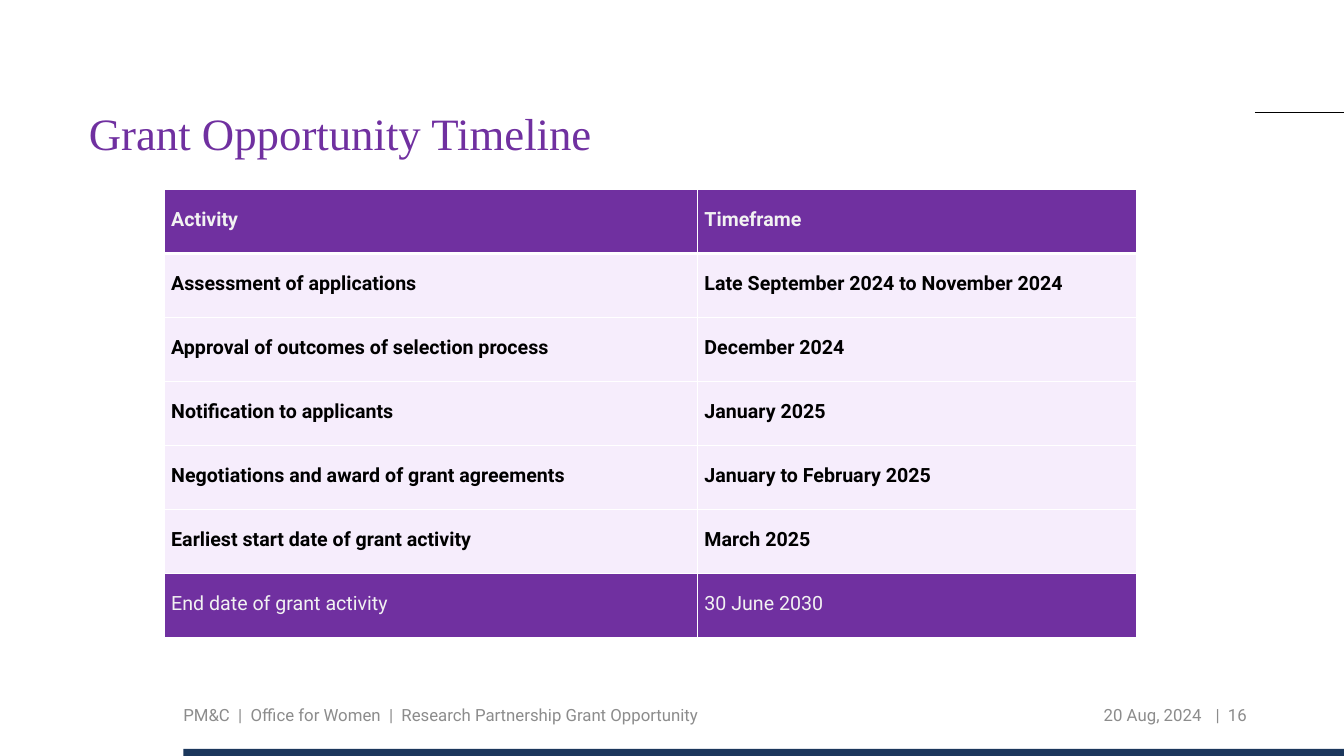
from lxml.etree import SubElement
from pptx import Presentation
from pptx.dml.color import RGBColor
from pptx.enum.shapes import MSO_CONNECTOR, MSO_SHAPE
from pptx.enum.text import MSO_ANCHOR, PP_ALIGN
from pptx.oxml.ns import qn
from pptx.util import Pt

PURPLE, LILAC, NAVY = "7030A0", "ECD9F9", "1B375C"
WHITE, PALE, GREY, BLACK = "FFFFFF", "F2F2F2", "8C8C8C", "000000"
SLIDE_WIDTH, SLIDE_HEIGHT = 960, 540
COLUMN_WIDTHS = (380.9, 313.9)
ROW_HEIGHT = 45.77
TIMELINE = [
    ("Activity", "Timeframe"),
    ("Assessment of applications", "Late September 2024 to November 2024"),
    ("Approval of outcomes of selection process", "December 2024"),
    ("Notification to applicants", "January 2025"),
    ("Negotiations and award of grant agreements", "January to February 2025"),
    ("Earliest start date of grant activity", "March 2025"),
    ("End date of grant activity", "30 June 2030"),
]
FOOTER = [
    ("PM&C  |  Office for Women  |  Research Partnership Grant Opportunity",
     131, 422.6, PP_ALIGN.LEFT),
    ("20 Aug, 2024", 726.5, 131.8, PP_ALIGN.RIGHT),
    ("|  16", 868.3, 28.8, PP_ALIGN.LEFT),
]


def rgb(value):
    return RGBColor.from_string(value)


def apply(target, values):
    for name, value in values.items():
        setattr(target, name, value)


def write(frame, text, size, font, color, bold=False, **paragraph_format):
    paragraph = frame.paragraphs[0]
    apply(paragraph, paragraph_format)
    run = paragraph.add_run()
    run.text = text
    apply(run.font, {"size": Pt(size), "name": font, "bold": bold})
    run.font.color.rgb = rgb(color)


def clear_margins(frame, anchor):
    apply(frame, {"margin_left": 0, "margin_right": 0, "margin_top": 0,
                  "margin_bottom": 0, "vertical_anchor": anchor, "word_wrap": True})


def add_heading(slide, text):
    title = slide.shapes.title
    apply(title, {"left": Pt(63.4), "top": Pt(80), "width": Pt(833.8), "height": Pt(65.5)})
    clear_margins(title.text_frame, MSO_ANCHOR.TOP)
    write(title.text_frame, text, 32, "Times New Roman", PURPLE,
          alignment=PP_ALIGN.LEFT, line_spacing=0.9)


def add_rule(slide, left, top):
    rule = slide.shapes.add_connector(
        MSO_CONNECTOR.STRAIGHT, Pt(left), Pt(top), Pt(SLIDE_WIDTH), Pt(top))
    rule.line.width = Pt(0.5)
    rule.line.color.rgb = rgb(BLACK)
    SubElement(rule._element.spPr, qn("a:effectLst"))


def add_bar(slide, left, height):
    bar = slide.shapes.add_shape(
        MSO_SHAPE.RECTANGLE, Pt(left), Pt(SLIDE_HEIGHT - height),
        Pt(SLIDE_WIDTH - left), Pt(height))
    bar.shadow.inherit = False
    bar.fill.solid()
    bar.fill.fore_color.rgb = rgb(NAVY)
    bar.line.fill.background()


def set_borders(cell, widths):
    properties = cell._tc.get_or_add_tcPr()
    for side, width in widths.items():
        border = SubElement(properties, qn(f"a:{side}"), w=str(Pt(width)))
        fill = SubElement(border, qn("a:solidFill"))
        SubElement(fill, qn("a:srgbClr"), val=WHITE)


def fill_cell(cell, color, opacity):
    cell.fill.solid()
    cell.fill.fore_color.rgb = rgb(color)
    if opacity < 100:
        tint = cell._tc.tcPr.find(f".//{qn('a:solidFill')}[last()]")
        tint = cell._tc.tcPr.find(qn("a:solidFill")).find(qn("a:srgbClr"))
        SubElement(tint, qn("a:alpha"), val=str(opacity * 1000))


def add_timeline(slide, left, top):
    last = len(TIMELINE) - 1
    timeline = slide.shapes.add_table(
        len(TIMELINE), len(COLUMN_WIDTHS), Pt(left), Pt(top),
        Pt(sum(COLUMN_WIDTHS)), Pt(ROW_HEIGHT * len(TIMELINE))).table
    timeline.horz_banding = False
    for column, width in zip(timeline.columns, COLUMN_WIDTHS):
        column.width = Pt(width)
    for index, (row, texts) in enumerate(zip(timeline.rows, TIMELINE)):
        row.height = Pt(ROW_HEIGHT)
        strong = index in (0, last)
        for cell, text in zip(row.cells, texts):
            apply(cell, {"margin_left": Pt(5), "margin_right": Pt(5), "margin_top": 0,
                         "margin_bottom": 0, "vertical_anchor": MSO_ANCHOR.MIDDLE})
            set_borders(cell, {"lnL": 1, "lnR": 1, "lnT": 3 if index == 1 else 1,
                               "lnB": 3 if index == 0 else 1})
            fill_cell(cell, PURPLE if strong else LILAC, 100 if strong else 46)
            write(cell.text_frame, text, 14, "Roboto", PALE if strong else BLACK,
                  bold=index < last, line_spacing=Pt(14), space_after=Pt(3),
                  space_before=Pt(6 if text == TIMELINE[last][1] else 3))


def add_footer_text(slide, text, left, width, alignment):
    box = slide.shapes.add_textbox(Pt(left), Pt(501.8), Pt(width), Pt(18))
    clear_margins(box.text_frame, MSO_ANCHOR.MIDDLE)
    write(box.text_frame, text, 12, "Roboto", GREY, alignment=alignment)


def main():
    """Build the grant timeline slide and save it."""
    deck = Presentation()
    apply(deck, {"slide_width": Pt(SLIDE_WIDTH), "slide_height": Pt(SLIDE_HEIGHT)})
    slide = deck.slides.add_slide(deck.slide_layouts[5])
    add_rule(slide, 896.4, 80)
    add_bar(slide, 131, 5)
    add_heading(slide, "Grant Opportunity Timeline")
    add_timeline(slide, 117.3, 135.4)
    for entry in FOOTER:
        add_footer_text(slide, *entry)
    deck.save("out.pptx")


if __name__ == "__main__":
    main()
